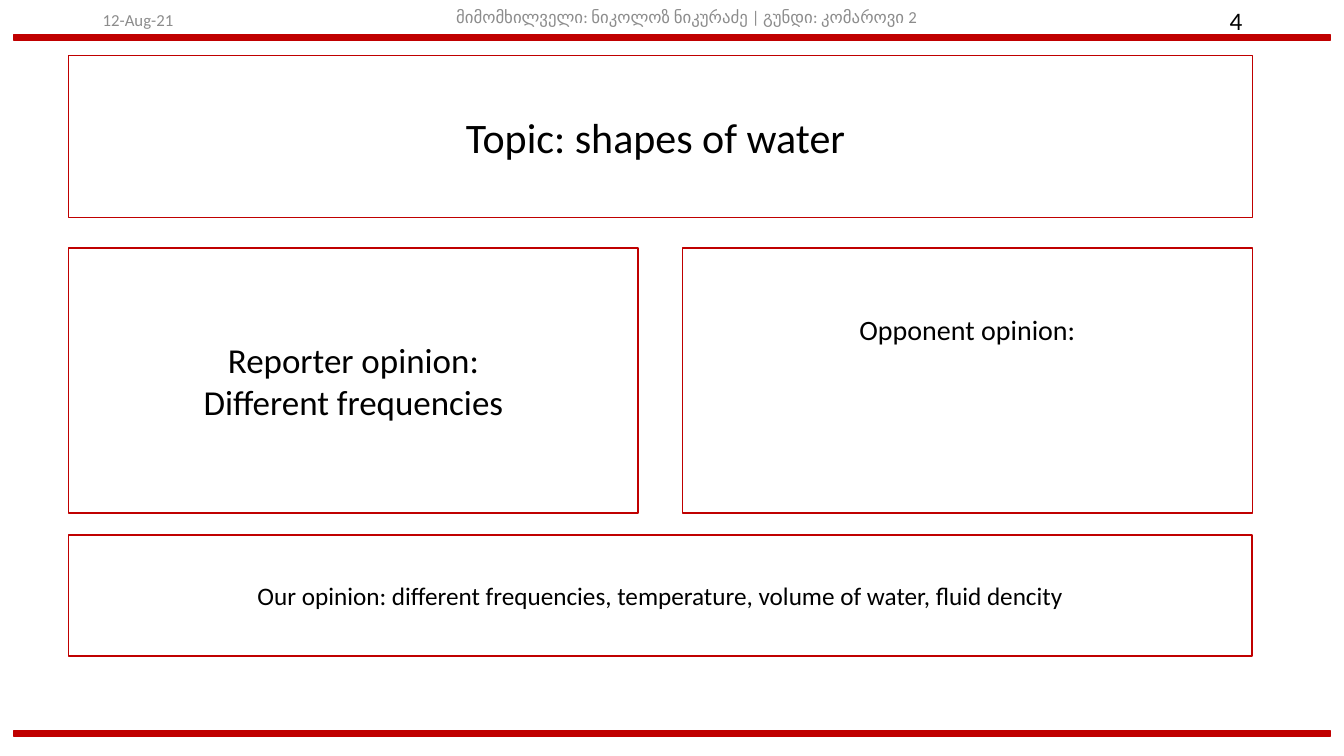
from dataclasses import dataclass
from pptx import Presentation
from pptx import util as u
from pptx.dml.color import RGBColor
from pptx.enum import shapes, text


@dataclass(frozen=True)
class Theme:
    font: str = "Calibri"
    red: str = "C00000"
    white: str = "FFFFFF"
    black: str = "000000"
    gray: str = "8C8C8C"
    title: int = 30
    large: int = 25
    mid: int = 20
    body: int = 18
    small: int = 12


def write(shape, words, size, color, font, align="CENTER", foot=0.05):
    frame = shape.text_frame
    frame.word_wrap = True
    frame.auto_size = text.MSO_AUTO_SIZE.NONE
    frame.vertical_anchor = text.MSO_ANCHOR.MIDDLE
    frame.margin_left = frame.margin_right = u.Inches(0.1)
    frame.margin_top = u.Inches(0.05)
    frame.margin_bottom = u.Inches(foot)
    frame.text = words
    for para in frame.paragraphs:
        para.alignment = getattr(text.PP_ALIGN, align)
        para.line_spacing = 1.0
        para.space_before = u.Pt(0)
        for run in para.runs:
            run.font.name = font
            run.font.size = u.Pt(size)
            run.font.color.rgb = RGBColor.from_string(color)


class Page:
    def __init__(self, slide, theme):
        self.slide = slide
        self.theme = theme

    def paint(self, shape, fill):
        shape.fill.solid()
        shape.fill.fore_color.rgb = RGBColor.from_string(fill)
        shape.line.color.rgb = RGBColor.from_string(self.theme.red)
        shape.line.width = u.Pt(1)

    def rect(self, area, fill):
        shape = self.slide.shapes.add_shape(
            shapes.MSO_SHAPE.RECTANGLE, *map(u.Inches, area))
        shape.shadow.inherit = False
        self.paint(shape, fill)
        return shape

    def bar(self, top):
        self.rect((0.14, top, 13.05, 0.06), self.theme.red)

    def label(self, words, area, size, color, align):
        box = self.slide.shapes.add_textbox(*map(u.Inches, area))
        write(box, words, size, color, self.theme.font, align)

    def panel(self, words, area, size, foot=0.05):
        box = self.rect(area, self.theme.white)
        write(box, words, size, self.theme.black, self.theme.font, foot=foot)

    def title(self, words, area):
        box = self.slide.shapes.title
        box.left, box.top, box.width, box.height = map(u.Inches, area)
        self.paint(box, self.theme.white)
        write(box, words, self.theme.title, self.theme.black, self.theme.font)


def main():
    deck = Presentation()
    deck.slide_width = u.Inches(13.33)
    deck.slide_height = u.Inches(7.5)
    look = Theme()
    page = Page(deck.slides.add_slide(deck.slide_layouts[5]), look)

    for top in (0.34, 7.25):
        page.bar(top)

    page.label("12-Aug-21", (0.92, 0, 3, 0.4), look.small, look.gray, "LEFT")
    page.label("მიმომხილველი: ნიკოლოზ ნიკურაძე | გუნდი: კომაროვი 2",
               (4.42, 0, 4.78, 0.34), look.small, look.gray, "CENTER")
    page.label("4", (9.42, 0, 3, 0.4), look.body, look.black, "RIGHT")

    left, wide, half = 0.68, 11.74, 5.65
    right = left + wide - half
    page.title("Topic: shapes of water ", (left, 0.55, wide, 1.61))
    page.panel("Reporter opinion:\nDifferent frequencies",
               (left, 2.46, half, 2.63), look.large)
    page.panel("Opponent opinion:", (right, 2.46, half, 2.63),
               look.mid, foot=1.07)
    page.panel("Our opinion: different frequencies, temperature, "
               "volume of water, fluid dencity",
               (left, 5.31, wide, 1.2), look.body)
    deck.save("out.pptx")


if __name__ == "__main__":
    main()
